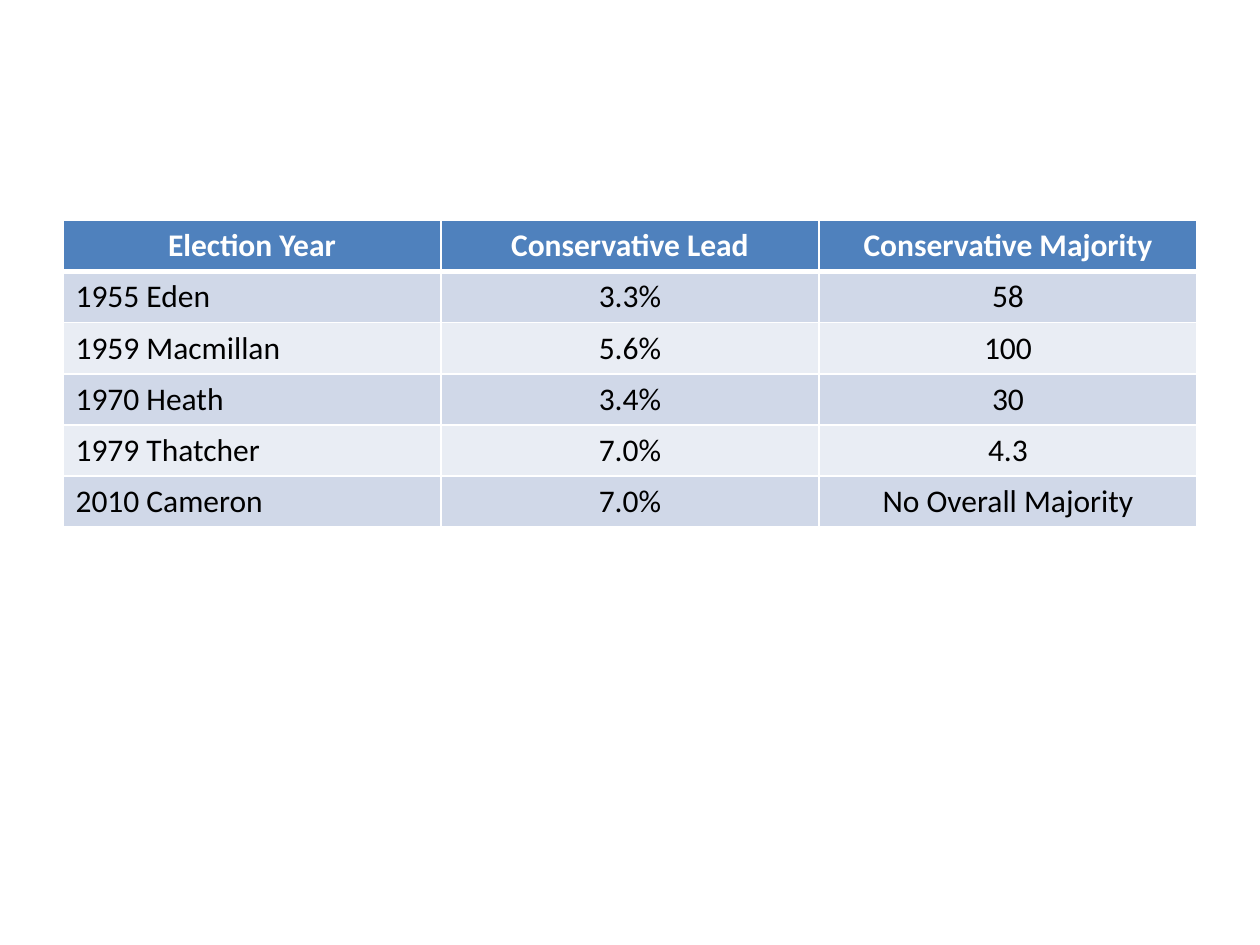
from lxml.etree import SubElement
from pptx import Presentation
from pptx.dml.color import RGBColor
from pptx.enum.text import PP_ALIGN
from pptx.oxml.ns import qn
from pptx.util import Inches, Pt

HUES = {"head": "4F81BD", "odd": "D0D8E8", "even": "E9EDF4",
        "white": "FFFFFF", "black": "000000"}
ROWS = [
    ("Election Year", "Conservative Lead", "Conservative Majority"),
    ("1955 Eden", "3.3%", "58"),
    ("1959 Macmillan", "5.6%", "100"),
    ("1970 Heath", "3.4%", "30"),
    ("1979 Thatcher", "7.0%", "4.3"),
    ("2010 Cameron", "7.0%", "No Overall Majority"),
]


def edge(cell, side, width):
    """Draw one white border; side is L, R, T or B."""
    line = SubElement(cell._tc.get_or_add_tcPr(), qn(f"a:ln{side}"), w=str(Pt(width)))
    fill = SubElement(line, qn("a:solidFill"))
    SubElement(fill, qn("a:srgbClr"), val=HUES["white"])


deck = Presentation()
deck.slide_width, deck.slide_height = Inches(10), Inches(7.5)
slide = deck.slides.add_slide(deck.slide_layouts[6])

wide = deck.slide_width * 0.9
left = (deck.slide_width - wide) / 2
high = Inches(2.43)
table = slide.shapes.add_table(len(ROWS), len(ROWS[0]), int(left), Inches(1.75),
                               int(wide), high).table

for r, row in enumerate(ROWS):
    head = r == 0
    tone = "head" if head else "odd" if r % 2 else "even"
    for c, text in enumerate(row):
        cell = table.cell(r, c)
        for side in "LRTB":
            thick = (head and side == "B") or (r == 1 and side == "T")
            edge(cell, side, 3 if thick else 1)
        cell.fill.solid()
        cell.fill.fore_color.rgb = RGBColor.from_string(HUES[tone])
        cell.text = text
        para = cell.text_frame.paragraphs[0]
        para.alignment = PP_ALIGN.CENTER if head or c else PP_ALIGN.LEFT
        font = para.font
        font.name, font.size, font.bold = "Calibri", Pt(18), head
        font.color.rgb = RGBColor.from_string(HUES["white" if head else "black"])

deck.save("out.pptx")
